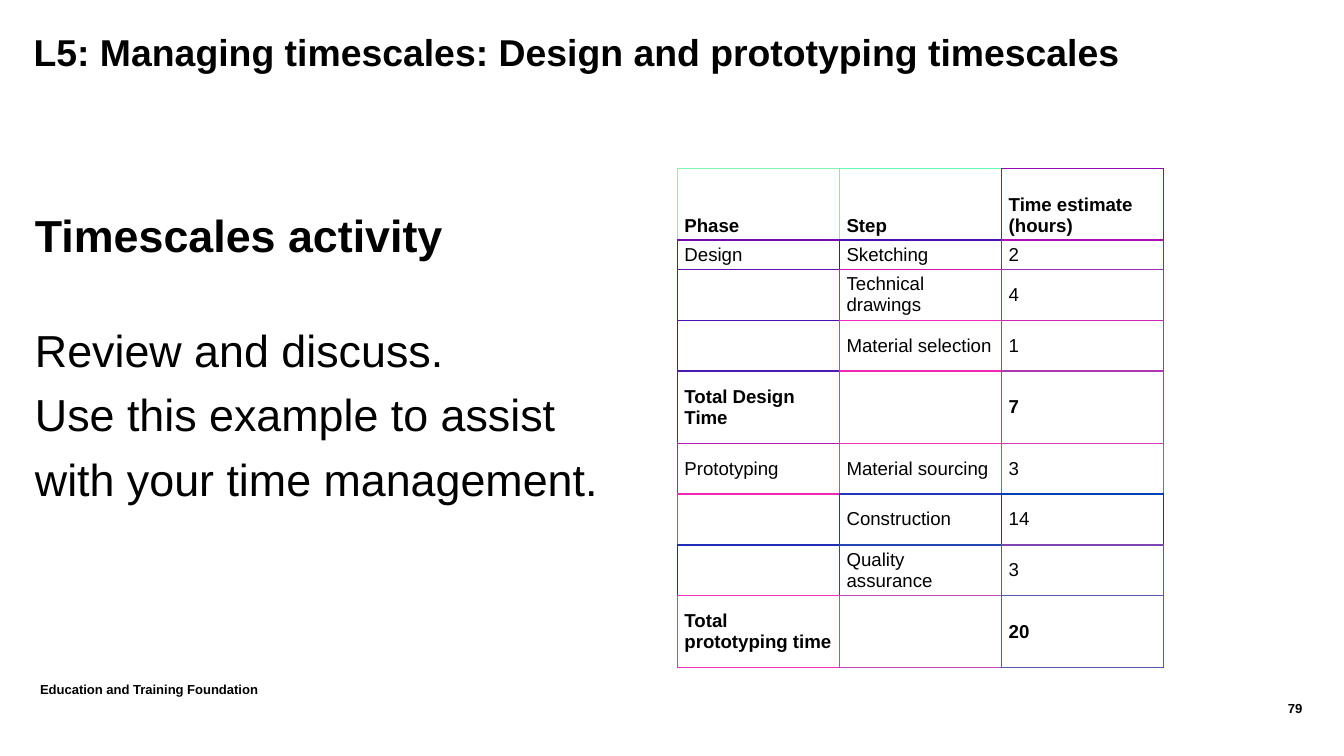
from dataclasses import dataclass

from lxml.etree import SubElement
from pptx import Presentation
from pptx.dml.color import RGBColor
from pptx.enum.text import MSO_ANCHOR as Anchor, MSO_AUTO_SIZE as AutoSize, PP_ALIGN as Align
from pptx.oxml.ns import qn
from pptx.util import Inches, Pt


@dataclass(frozen=True)
class Theme:
    font: str = "Arial"
    ink: str = "000000"
    paper: str = "FFFFFF"
    title: int = 20
    body: int = 24
    table: int = 10
    small: int = 7
    thin: float = 0.5
    thick: float = 1
    cell_side: float = 3.8
    cell_edge: float = 1.9


TITLE = "L5: Managing timescales: Design and prototyping timescales"
TABLE_WIDTH, TABLE_HEIGHT = 3.62, 3.72
ROW_SHARES = [0.54, 0.22, 0.38, 0.38, 0.54, 0.38, 0.38, 0.38, 0.54]
TIMESCALES = [
    ["Phase", "Step", "Time estimate (hours)"],
    ["Design", "Sketching", "2"],
    ["", "Technical drawings", "4"],
    ["", "Material selection", "1"],
    ["Total Design Time", "", "7"],
    ["Prototyping", "Material sourcing", "3"],
    ["", "Construction", "14"],
    ["", "Quality assurance", "3"],
    ["Total prototyping time", "", "20"],
]
BORDER_COLOURS = [
    ["80F4B3", "60FCB3", "9008B4"],
    ["700AB4", "500CB4", "B00CB4"],
    ["6014B4", "D019B4", "A02BB4"],
    ["500FB4", "F029B4", "D025B4"],
    ["5018B4", "F029B4", "B036B4"],
    ["B01BB4", "F035B4", "D03DB4"],
    ["F026B4", "2036B4", "003EB4"],
    ["202DB4", "2048B4", "8045B4"],
    ["F032B4", "C047B4", "5057B4"],
]


class SlideBuilder:
    def __init__(self, page, theme):
        self.page = page
        self.theme = theme

    def span(self, para, text, size, bold=False):
        span = para.add_run()
        span.text = text
        span.font.name = self.theme.font
        span.font.size = Pt(size)
        span.font.bold = bold
        span.font.color.rgb = RGBColor.from_string(self.theme.ink)

    def frame(self, box, inset=True):
        frame = box.text_frame
        frame.word_wrap = True
        frame.auto_size = AutoSize.NONE
        frame.vertical_anchor = Anchor.TOP
        if not inset:
            frame.margin_left = frame.margin_right = 0
            frame.margin_top = frame.margin_bottom = 0
        return frame

    def title(self, text, left, top, width, height):
        box = self.page.shapes.title
        box.left, box.top = Inches(left), Inches(top)
        box.width, box.height = Inches(width), Inches(height)
        para = self.frame(box, inset=False).paragraphs[0]
        para.alignment = Align.LEFT
        para.line_spacing = Pt(20)
        self.span(para, text, self.theme.title, bold=True)

    def text(self, left, top, width, height, inset=False):
        box = self.page.shapes.add_textbox(*map(Inches, (left, top, width, height)))
        return self.frame(box, inset)

    def activity(self, heading, lines, left, top, width, height):
        frame = self.text(left, top, width, height)
        para = frame.paragraphs[0]
        para.line_spacing = Pt(27)
        self.span(para, heading, self.theme.body, bold=True)
        for index, line in enumerate(lines):
            para = frame.add_paragraph()
            para.line_spacing = 1.2
            para.space_before = Pt(0 if index else 27)
            self.span(para, line, self.theme.body)

    def label(self, text, left, top, width, height, align=Align.LEFT, inset=False):
        para = self.text(left, top, width, height, inset).paragraphs[0]
        para.alignment = align
        self.span(para, text, self.theme.small, bold=True)

    def border(self, cell, side, colour, width):
        properties = cell._tc.get_or_add_tcPr()
        line = SubElement(properties, qn(f"a:ln{side}"), w=str(Pt(width)))
        fill = SubElement(line, qn("a:solidFill"))
        SubElement(fill, qn("a:srgbClr"), val=colour)

    def borders(self, cell, row, column, colours):
        thin, thick = self.theme.thin, self.theme.thick
        last_row, last_column = len(colours) - 1, len(colours[0]) - 1
        own = colours[row][column]
        right = colours[row][min(column + 1, last_column)]
        below = colours[min(row + 1, last_row)][column]
        self.border(cell, "L", own, thin)
        self.border(cell, "R", right, thin)
        self.border(cell, "T", own, thick if row else thin)
        self.border(cell, "B", below, thick if row < last_row else thin)

    def table(self, rows, colours, shares, left, top, width, height):
        columns = len(rows[0])
        table = self.page.shapes.add_table(
            len(rows), columns, *map(Inches, (left, top, width, height))
        ).table
        table.first_row = table.horz_banding = False
        for column in table.columns:
            column.width = Inches(width / columns)
        for row, values in enumerate(rows):
            table.rows[row].height = Inches(height * shares[row] / sum(shares))
            bold = row == 0 or values[0].startswith("Total")
            for column, value in enumerate(values):
                cell = table.cell(row, column)
                cell.margin_left = cell.margin_right = Pt(self.theme.cell_side)
                cell.margin_top = cell.margin_bottom = Pt(self.theme.cell_edge)
                cell.vertical_anchor = Anchor.MIDDLE if row else Anchor.BOTTOM
                self.borders(cell, row, column, colours)
                cell.fill.solid()
                cell.fill.fore_color.rgb = RGBColor.from_string(self.theme.paper)
                if value:
                    self.span(cell.text_frame.paragraphs[0], value, self.theme.table, bold)


def main():
    deck = Presentation()
    deck.slide_width = Inches(10)
    deck.slide_height = Inches(10 * 9 / 16)
    page = deck.slides.add_slide(deck.slide_layouts.get_by_name("Title Only"))
    builder = SlideBuilder(page, Theme())
    builder.title(TITLE, 0.25, 0.27, 9.23, 0.76)
    builder.activity(
        "Timescales activity",
        ["Review and discuss.", "Use this example to assist with your time management."],
        0.26, 1.57, 4.51, 3.6,
    )
    builder.label("79", 8.7, 5.21, 0.99, 0.3, align=Align.RIGHT)
    builder.table(
        TIMESCALES, BORDER_COLOURS, ROW_SHARES, 5.04, 1.25, TABLE_WIDTH, TABLE_HEIGHT
    )
    builder.label("Education and Training Foundation", 0.2, 5.02, 5, 0.22, inset=True)
    deck.save("out.pptx")


if __name__ == "__main__":
    main()
